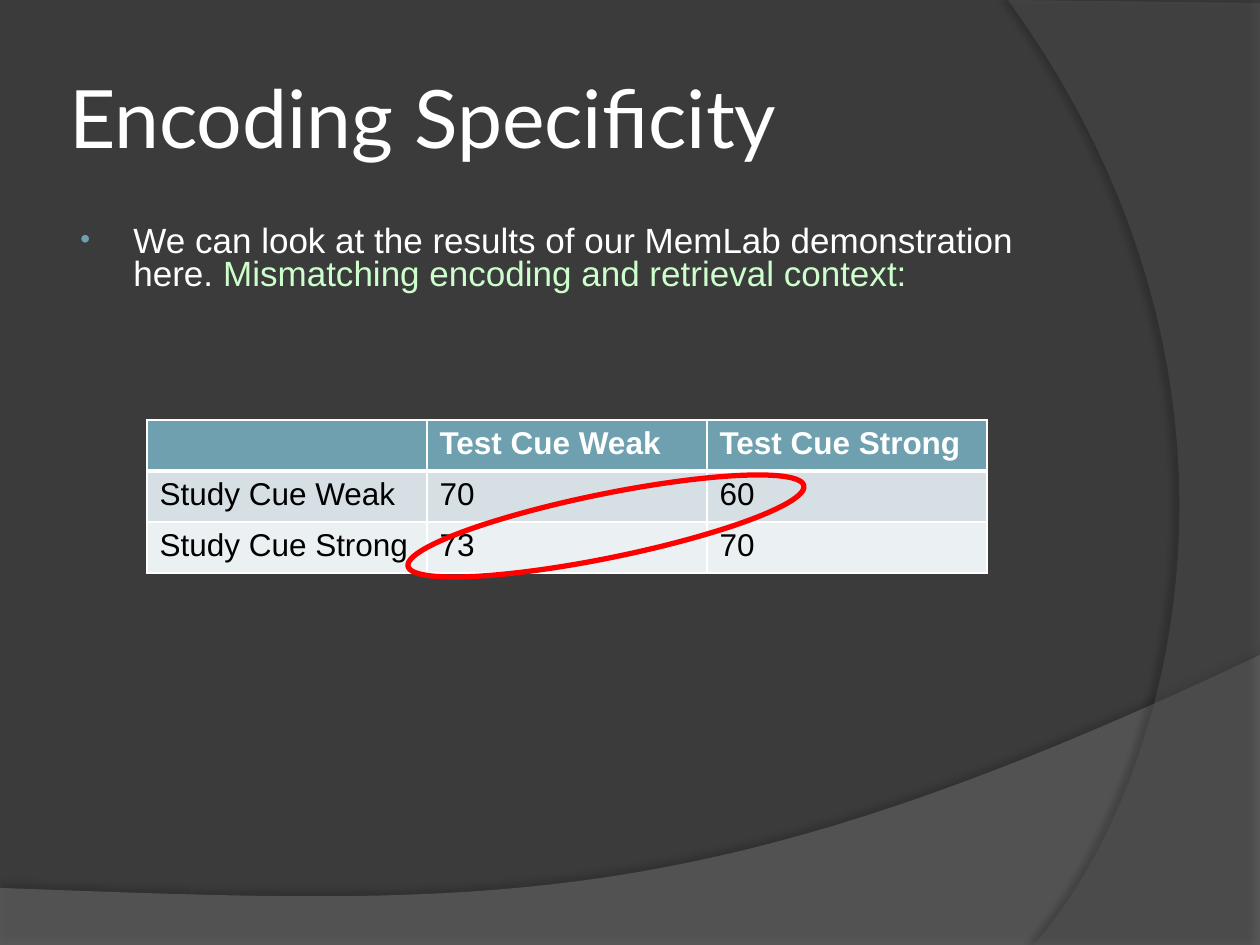
from collections import namedtuple
from dataclasses import dataclass

from lxml import etree
from pptx import Presentation
from pptx.dml.color import RGBColor
from pptx.enum.shapes import MSO_SHAPE
from pptx.enum.text import MSO_ANCHOR
from pptx.oxml.ns import qn
from pptx.util import Emu, Pt

OVAL = MSO_SHAPE.OVAL
MIDDLE = MSO_ANCHOR.MIDDLE
EMU_PER_PX = 914400 / 126
CURVE_STEPS = 40

Box = namedtuple("Box", "left top width height")


@dataclass(frozen=True)
class Theme:
    """Colours, fonts and type sizes of the slide."""

    background: str = "3B3B3B"
    wave: str = "7C7C7C"
    arc: str = "595959"
    shadow: str = "000000"
    light: str = "FFFFFF"
    dark: str = "000000"
    accent: str = "6EA0B0"
    highlight: str = "CCFFCC"
    ring: str = "FF0000"
    bands: tuple = ("6EA0B0", "D5DFE4", "EBF0F2")
    title_font: str = "Lato"
    body_font: str = "Arial"
    title_size: int = 46
    body_size: int = 20
    table_size: int = 18


THEME = Theme()


def px(length):
    """Turn pixels into EMU."""
    return Emu(round(length * EMU_PER_PX))


def place(box):
    """Turn a pixel box into EMU positions."""
    return [px(length) for length in box]


def add_xml(parent, tag, **attributes):
    """Append a DrawingML element with its attributes."""
    return etree.SubElement(parent, qn(tag), {key: str(value) for key, value in attributes.items()})


def apply_format(target, values):
    """Set every attribute named in a dict of format values."""
    for name, value in values.items():
        setattr(target, name, value)


def paint(fill, color):
    """Make a fill solid in one colour."""
    fill.solid()
    fill.fore_color.rgb = RGBColor.from_string(color)


def write_run(paragraph, text, color, font, size, bold=False):
    """Add one formatted run to a paragraph."""
    run = paragraph.add_run()
    run.text = text
    apply_format(run.font, {"name": font, "size": Pt(size), "bold": bold})
    run.font.color.rgb = RGBColor.from_string(color)


def bezier(start, control_a, control_b, end):
    """Return the points along a cubic curve after its start."""
    def at(t, axis):
        s = 1 - t
        return (s**3 * start[axis] + 3 * s * s * t * control_a[axis]
                + 3 * s * t * t * control_b[axis] + t**3 * end[axis])

    return [(at(i / CURVE_STEPS, 0), at(i / CURVE_STEPS, 1)) for i in range(1, CURVE_STEPS + 1)]


def draw_backdrop(slide, box, corners, curve, color, alpha, shadow):
    """Draw a translucent panel with one curved edge and a soft shadow."""
    outline = [(px(x), px(y)) for x, y in corners + bezier(corners[-1], *curve)]
    builder = slide.shapes.build_freeform(*outline[0], scale=1)
    builder.add_line_segments(outline[1:], close=True)
    panel = builder.convert_to_shape(px(box.left), px(box.top))
    paint(panel.fill, color)
    add_xml(panel.fill._xPr.find(".//" + qn("a:srgbClr")), "a:alpha", val=alpha * 1000)
    panel.line.fill.background()
    panel.shadow.inherit = False
    opacity, blur, distance, angle = shadow
    effects = panel._element.spPr.find(qn("a:effectLst"))
    cast = add_xml(effects, "a:outerShdw", blurRad=Pt(blur), dist=Pt(distance),
                   dir=angle * 60000, algn="ctr", rotWithShape=0)
    tint = add_xml(cast, "a:srgbClr", val=THEME.shadow)
    add_xml(tint, "a:alpha", val=opacity * 1000)


def draw_title(slide, box, text):
    """Write the slide title."""
    frame = slide.shapes.add_textbox(*place(box)).text_frame
    margins = dict.fromkeys(("margin_left", "margin_top", "margin_right", "margin_bottom"), px(6))
    apply_format(frame, {"word_wrap": True, "vertical_anchor": MIDDLE, **margins})
    write_run(frame.paragraphs[0], text, THEME.light, THEME.title_font, THEME.title_size)


def draw_statement(slide, box, parts):
    """Write the bulleted statement from text and colour pairs."""
    frame = slide.shapes.add_textbox(*place(box)).text_frame
    frame.word_wrap = True
    statement = frame.paragraphs[0]
    apply_format(statement, {"line_spacing": 0.8, "space_before": Pt(4)})
    for text, color in parts:
        write_run(statement, text, color, THEME.body_font, THEME.body_size)
    properties = statement._p.get_or_add_pPr()
    properties.set("marL", str(px(58)))
    properties.set("indent", str(-px(53)))
    add_xml(add_xml(properties, "a:buClr"), "a:srgbClr", val=THEME.accent)
    add_xml(properties, "a:buSzPct", val=80000)
    add_xml(properties, "a:buFont", typeface=THEME.body_font)
    add_xml(properties, "a:buChar", char="•")


def set_borders(cell, row):
    """Rule a cell in white, with a heavier line under the header."""
    widths = {"L": 1, "R": 1, "T": 3 if row == 1 else 1, "B": 3 if row == 0 else 1}
    properties = cell._tc.get_or_add_tcPr()
    for position, (side, width) in enumerate(widths.items()):
        line = add_xml(properties, "a:ln" + side, w=Pt(width))
        add_xml(add_xml(line, "a:solidFill"), "a:srgbClr", val=THEME.light)
        properties.insert(position, line)


def draw_results(slide, box, rows):
    """Build the table of recall results."""
    table = slide.shapes.add_table(len(rows), len(rows[0]), *place(box)).table
    for column in table.columns:
        column.width = px(box.width // len(rows[0]))
    for row, values in enumerate(rows):
        table.rows[row].height = px(box.height // len(rows))
        color = THEME.dark if row else THEME.light
        for column, value in enumerate(values):
            cell = table.cell(row, column)
            paint(cell.fill, THEME.bands[row])
            set_borders(cell, row)
            if value:
                write_run(cell.text_frame.paragraphs[0], value, color,
                          THEME.body_font, THEME.table_size, row == 0)


def draw_ring(slide, box, rotation):
    """Circle the mismatched results."""
    ring = slide.shapes.add_shape(OVAL, *place(box))
    ring.rotation = rotation
    ring.fill.background()
    ring.line.width = Pt(3)
    ring.line.color.rgb = RGBColor.from_string(THEME.ring)
    ring.shadow.inherit = False


def main():
    """Build and save the slide."""
    deck = Presentation()
    apply_format(deck, {"slide_width": px(1260), "slide_height": px(945)})
    slide = deck.slides.add_slide(deck.slide_layouts[6])
    paint(slide.background.fill, THEME.background)
    draw_backdrop(slide, Box(0, 655, 1260, 291),
                  [(0, 233), (0, 291), (1260, 291), (1260, 0)],
                  [(704, 264), (493, 251), (0, 233)],
                  THEME.wave, 45, (35, 4, 3.5, 270))
    draw_backdrop(slide, Box(1008, 0, 252, 945),
                  [(252, 3), (252, 945), (26, 945)],
                  [(170, 780), (275, 378), (0, 0)],
                  THEME.arc, 40, (45, 4, 4, 180))
    draw_statement(slide, Box(63, 220, 1029, 624), [
        ("We can look at the results of our MemLab demonstration here. ", THEME.light),
        ("Mismatching encoding and retrieval context:", THEME.highlight),
    ])
    draw_results(slide, Box(147, 420, 840, 153), [
        ("", "Test Cue Weak", "Test Cue Strong"),
        ("Study Cue Weak", "70", "60"),
        ("Study Cue Strong", "73", "70"),
    ])
    draw_title(slide, Box(63, 38, 1029, 157), "Encoding Specificity")
    draw_ring(slide, Box(404, 494, 404, 64), 348.5)
    deck.save("out.pptx")


if __name__ == "__main__":
    main()
